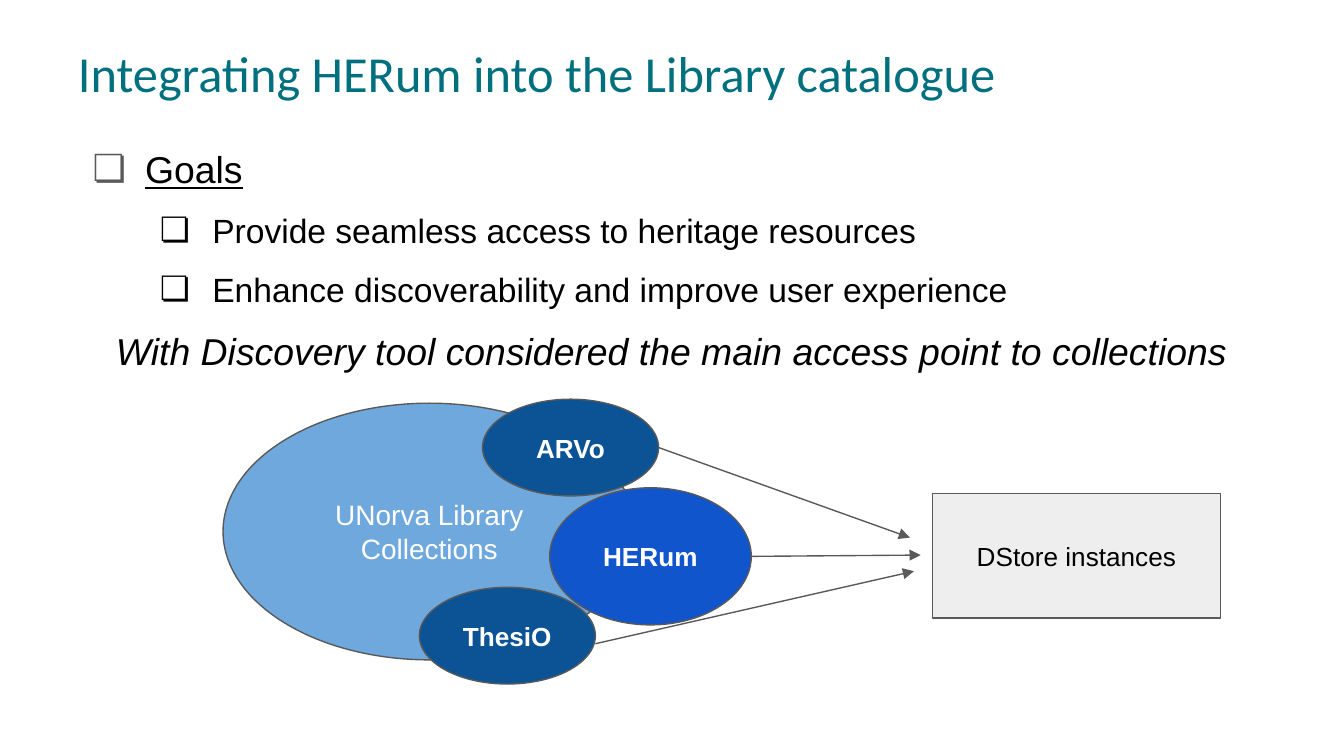
from lxml import etree
from pptx import Presentation
from pptx.dml.color import RGBColor
from pptx.enum.shapes import MSO_CONNECTOR, MSO_SHAPE
from pptx.enum.text import MSO_ANCHOR, PP_ALIGN
from pptx.oxml.ns import qn
from pptx.util import Inches, Pt

STRAIGHT = MSO_CONNECTOR.STRAIGHT
ELLIPSE, RECTANGLE = MSO_SHAPE.OVAL, MSO_SHAPE.RECTANGLE
MIDDLE, TOP = MSO_ANCHOR.MIDDLE, MSO_ANCHOR.TOP
CENTER = PP_ALIGN.CENTER

THEME = {
    "title": "00707F", "ink": "000000", "line": "595959", "white": "FFFFFF",
    "library": "6FA8DC", "heritage": "1155CC", "repository": "0B5394", "platform": "EEEEEE",
    "title_font": "Calibri", "body_font": "Arial",
    "title_size": 27, "goal_size": 20, "item_size": 18, "library_size": 15, "node_size": 14,
    "line_width": 0.75,
}

TITLE = "Integrating HERum into the Library catalogue"
GOALS = "Goals"
GOAL_ITEMS = [
    "Provide seamless access to heritage resources",
    "Enhance discoverability and improve user experience",
]
REMARK = "With Discovery tool considered the main access point to collections"

NODES = [
    ("UNorva Library Collections", ELLIPSE, (1.66, 3, 3.07, 1.91), "library", "white", "library_size", False),
    ("HERum", ELLIPSE, (4.09, 3.63, 1.5, 1.02), "heritage", "white", "node_size", True),
    ("ARVo", ELLIPSE, (3.59, 2.97, 1.31, 0.72), "repository", "white", "node_size", True),
    ("ThesiO", ELLIPSE, (3.12, 4.37, 1.31, 0.72), "repository", "white", "node_size", True),
    ("DStore instances", RECTANGLE, (6.94, 3.67, 2.14, 0.93), "platform", "ink", "node_size", False),
]
ARROWS = [
    ((4.9, 3.33), (6.77, 4)),
    ((5.59, 4.14), (6.85, 4.13)),
    ((4.43, 4.79), (6.8, 4.25)),
]


def color(name):
    return RGBColor.from_string(THEME[name])


def style(paragraph, size, ink="ink", font="body_font", bold=False, italic=False, underline=False):
    for run in paragraph.runs:
        run.font.name = THEME[font]
        run.font.size = Pt(THEME[size])
        run.font.color.rgb = color(ink)
        run.font.bold = bold
        run.font.italic = italic
        run.font.underline = underline


def set_frame(frame, inset_x, inset_y, anchor):
    frame.word_wrap = True
    frame.vertical_anchor = anchor
    frame.margin_left = frame.margin_right = Inches(inset_x)
    frame.margin_top = frame.margin_bottom = Inches(inset_y)


def add_text(slide, box, anchor):
    frame = slide.shapes.add_textbox(*map(Inches, box)).text_frame
    set_frame(frame, 0.08, 0.04, anchor)
    return frame


def set_bullet(paragraph, indent, ink):
    properties = paragraph._p.get_or_add_pPr()
    properties.set("marL", str(Inches(indent)))
    properties.set("indent", str(Inches(-0.39)))
    bullet_color = etree.SubElement(properties, qn("a:buClr"))
    etree.SubElement(bullet_color, qn("a:srgbClr"), val=THEME[ink])
    etree.SubElement(properties, qn("a:buFont"), typeface=THEME["body_font"])
    etree.SubElement(properties, qn("a:buChar"), char="❏")


def add_goals(slide):
    frame = add_text(slide, (0.5, 1.05, 9, 4.16), TOP)
    goals = frame.paragraphs[0]
    goals.text = GOALS
    style(goals, "goal_size", underline=True)
    set_bullet(goals, 0.5, "line")
    for item in GOAL_ITEMS:
        paragraph = frame.add_paragraph()
        paragraph.text = item
        paragraph.level = 1
        paragraph.space_before = Pt(10)
        style(paragraph, "item_size")
        set_bullet(paragraph, 1, "ink")
    remark = frame.add_paragraph()
    remark.text = REMARK
    remark.alignment = CENTER
    remark.space_before = remark.space_after = Pt(10)
    style(remark, "goal_size", italic=True)


def set_line(line):
    line.color.rgb = color("line")
    line.width = Pt(THEME["line_width"])


def add_node(slide, label, outline, box, fill, ink, size, bold):
    node = slide.shapes.add_shape(outline, *map(Inches, box))
    node.shadow.inherit = False
    node.fill.solid()
    node.fill.fore_color.rgb = color(fill)
    set_line(node.line)
    set_frame(node.text_frame, 0.1, 0.1, MIDDLE)
    node.text_frame.text = label
    paragraph = node.text_frame.paragraphs[0]
    paragraph.alignment = CENTER
    style(paragraph, size, ink, bold=bold)


def add_arrow(slide, start, end):
    arrow = slide.shapes.add_connector(STRAIGHT, *map(Inches, start + end))
    set_line(arrow.line)
    etree.SubElement(arrow.line._get_or_add_ln(), qn("a:tailEnd"), type="triangle")
    etree.SubElement(arrow._element.spPr, qn("a:effectLst"))


def main():
    deck = Presentation()
    deck.slide_width = Inches(10)
    deck.slide_height = deck.slide_width * 9 // 16
    slide = deck.slides.add_slide(deck.slide_layouts[6])
    title = add_text(slide, (0.5, 0.28, 9, 0.51), MIDDLE)
    title.text = TITLE
    style(title.paragraphs[0], "title_size", "title", "title_font")
    add_goals(slide)
    *collections, platform = NODES
    for node in collections:
        add_node(slide, *node)
    for start, end in ARROWS:
        add_arrow(slide, start, end)
    add_node(slide, *platform)
    deck.save("out.pptx")


if __name__ == "__main__":
    main()
